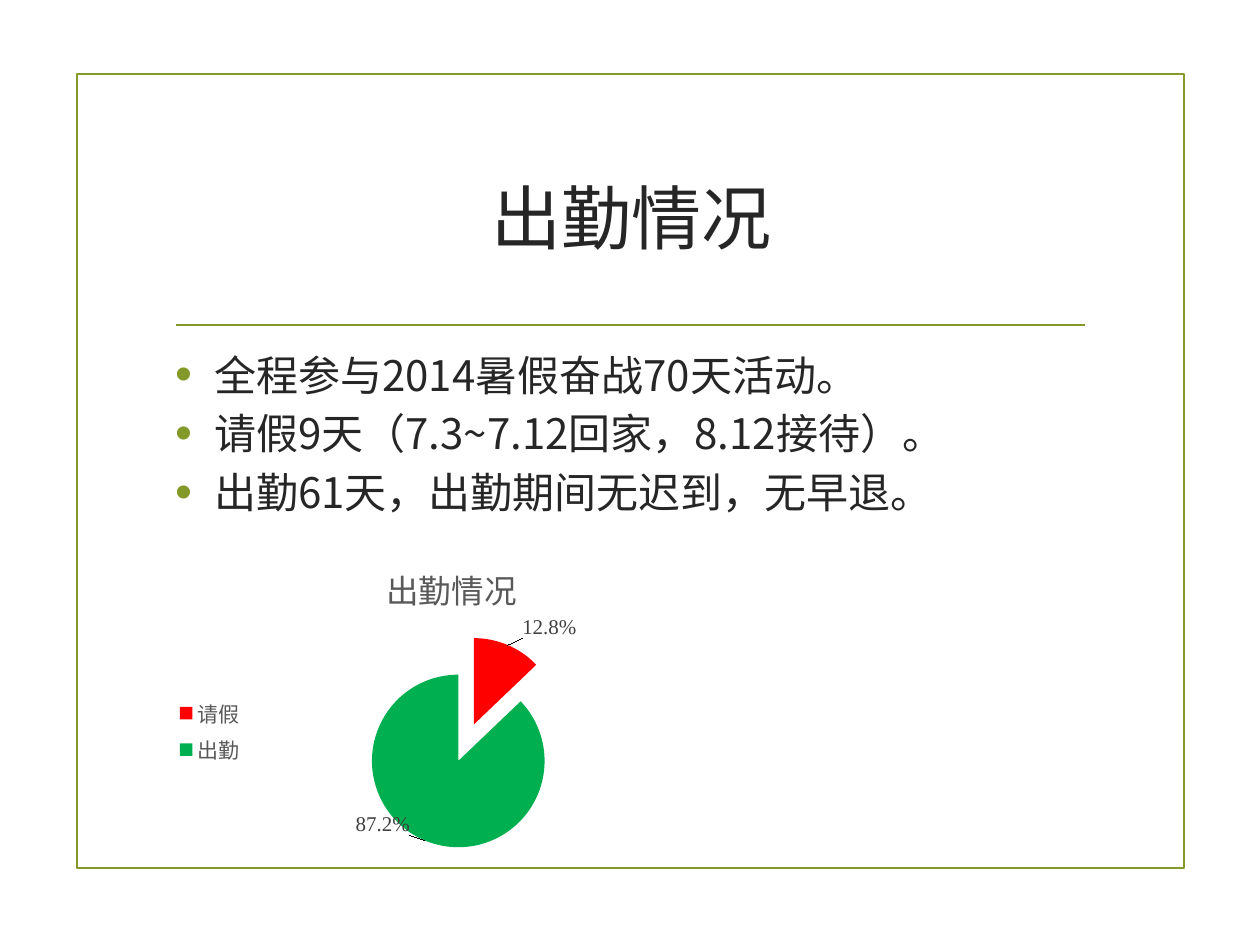
from dataclasses import dataclass

from lxml.etree import SubElement
from pptx import Presentation
from pptx.chart.data import CategoryChartData
from pptx.dml.color import RGBColor
from pptx.enum.chart import XL_CHART_TYPE as ChartType
from pptx.enum.chart import XL_LABEL_POSITION as LabelPos
from pptx.enum.chart import XL_LEGEND_POSITION as LegendPos
from pptx.enum.shapes import MSO_CONNECTOR as Connector
from pptx.enum.shapes import MSO_SHAPE as Shape
from pptx.enum.text import MSO_ANCHOR as Anchor
from pptx.enum.text import MSO_AUTO_SIZE as AutoSize
from pptx.enum.text import PP_ALIGN as Align
from pptx.oxml import parse_xml
from pptx.oxml.ns import nsdecls, qn
from pptx.util import Inches, Pt

COLORS = {
    "olive": "83992A", "text": "262626", "legend": "595959",
    "label": "404040", "leave": "FF0000", "present": "00B050",
}
CJK, LATIN = "Noto Sans CJK SC", "Times New Roman"
TITLE = "出勤情况"
BULLETS = [
    "全程参与2014暑假奋战70天活动。",
    "请假9天（7.3~7.12回家，8.12接待）。",
    "出勤61天，出勤期间无迟到，无早退。",
]


@dataclass
class Slice:
    name: str
    days: int
    label: str
    color: str
    shift: tuple[float, float]
    explosion: int = 0


SLICES = [
    Slice("请假", 9, "12.8%", "leave", (0.02, 0), 23),
    Slice("出勤", 61, "87.2%", "present", (-0.02, -0.09)),
]


def rgb(name: str) -> RGBColor:
    return RGBColor.from_string(COLORS[name])


def style_font(font, size: float, color: str, latin: str = CJK) -> None:
    font.size, font.name, font.bold = Pt(size), latin, False
    font.color.rgb = rgb(color)


def add_text(p, text: str, *, size: float, color: str, font: str = CJK, align=None) -> None:
    r = p.add_run()
    r.text = text
    style_font(r.font, size, color, font)
    SubElement(r.font._element, qn("a:ea")).set("typeface", CJK)
    if align is not None:
        p.alignment = align


def place(sp, left: float, top: float, width: float, height: float) -> None:
    sp.left, sp.top, sp.width, sp.height = map(Inches, (left, top, width, height))


def add_bullet(p) -> None:
    pPr = p._p.get_or_add_pPr()
    pPr.set("marL", str(Inches(0.31)))
    pPr.set("indent", str(-Inches(0.31)))
    for xml in (
        f'<a:buClr {nsdecls("a")}><a:srgbClr val="{COLORS["olive"]}"/></a:buClr>',
        f'<a:buSzPct {nsdecls("a")} val="115000"/>',
        f'<a:buFont {nsdecls("a")} typeface="Arial"/>',
        f'<a:buChar {nsdecls("a")} char="•"/>',
    ):
        pPr.append(parse_xml(xml))


def layout_xml(**values):
    """Manual chart layout; each keyword is one of its settings."""
    items = "".join(f'<c:{key} val="{val}"/>' for key, val in values.items())
    return parse_xml(
        f'<c:layout {nsdecls("c")}><c:manualLayout>{items}</c:manualLayout></c:layout>')


def draw_frame(s) -> None:
    sp = s.shapes.add_shape(
        Shape.RECTANGLE, Inches(0.61), Inches(0.59), Inches(8.79), Inches(6.3))
    sp.shadow.inherit = False
    sp.fill.background()
    rule = s.shapes.add_connector(
        Connector.STRAIGHT, Inches(1.4), Inches(2.58), Inches(8.61), Inches(2.58))
    SubElement(rule._element.spPr, qn("a:effectLst"))
    for item in (sp, rule):
        item.line.color.rgb = rgb("olive")
        item.line.width = Pt(1.25)


def fill_placeholders(s) -> None:
    title, body = s.shapes.title, s.placeholders[1]
    place(title, 1.29, 1, 7.44, 1.43)
    title.text_frame.vertical_anchor = Anchor.MIDDLE
    add_text(title.text_frame.paragraphs[0], TITLE, size=40, color="text", align=Align.CENTER)
    place(body, 1.29, 2.72, 7.44, 3.77)
    tf = body.text_frame
    tf.auto_size = AutoSize.NONE
    for i, text in enumerate(BULLETS):
        p = tf.add_paragraph() if i else tf.paragraphs[0]
        p.space_before, p.space_after = Pt(0), Pt(4.8)
        add_bullet(p)
        add_text(p, text, size=24, color="text")


def draw_pie(s) -> None:
    data = CategoryChartData()
    data.categories = [item.name for item in SLICES]
    data.add_series("Series 1", [item.days for item in SLICES])
    chart = s.shapes.add_chart(
        ChartType.PIE, Inches(1.29), Inches(4.3), Inches(4.59), Inches(3.01), data).chart
    chart.font.size, chart.font.name = Pt(10), LATIN
    chart.has_title = True
    add_text(chart.chart_title.text_frame.paragraphs[0], TITLE, size=18.6, color="legend")
    chart.has_legend = True
    chart.legend.position = LegendPos.LEFT
    chart.legend.include_in_layout = False
    style_font(chart.legend.font, 12, "legend", LATIN)

    plot = chart.plots[0]
    plot.vary_by_categories = True
    series = plot.series[0]
    labels = series.data_labels
    labels.show_value = True
    labels.position = LabelPos.OUTSIDE_END
    style_font(labels.font, 12, "label", LATIN)
    for i, item in enumerate(SLICES):
        point = series.points[i]
        point.format.fill.solid()
        point.format.fill.fore_color.rgb = rgb(item.color)
        if item.explosion:
            fill = point.format._element
            fill.addprevious(parse_xml(
                f'<c:explosion {nsdecls("c")} val="{item.explosion}"/>'))
        label = point.data_label
        add_text(label.text_frame.paragraphs[0], item.label,
                 size=12, color="label", font=LATIN)
        label.position = LabelPos.OUTSIDE_END

    for node, item in zip(series._element.iter(qn("c:dLbl")), SLICES):
        x, y = item.shift
        node.find(qn("c:idx")).addnext(layout_xml(x=x, y=y))
    area = chart._chartSpace.find(".//" + qn("c:plotArea"))
    for old in area.findall(qn("c:layout")):
        area.remove(old)
    area.insert(0, layout_xml(
        layoutTarget="inner", xMode="edge", yMode="edge", x=0.33, y=0.25, w=0.39, h=0.56))


def main() -> None:
    prs = Presentation()
    prs.slide_width, prs.slide_height = Inches(10), Inches(7.5)
    s = prs.slides.add_slide(prs.slide_layouts[1])
    draw_frame(s)
    fill_placeholders(s)
    draw_pie(s)
    prs.save("out.pptx")


if __name__ == "__main__":
    main()
